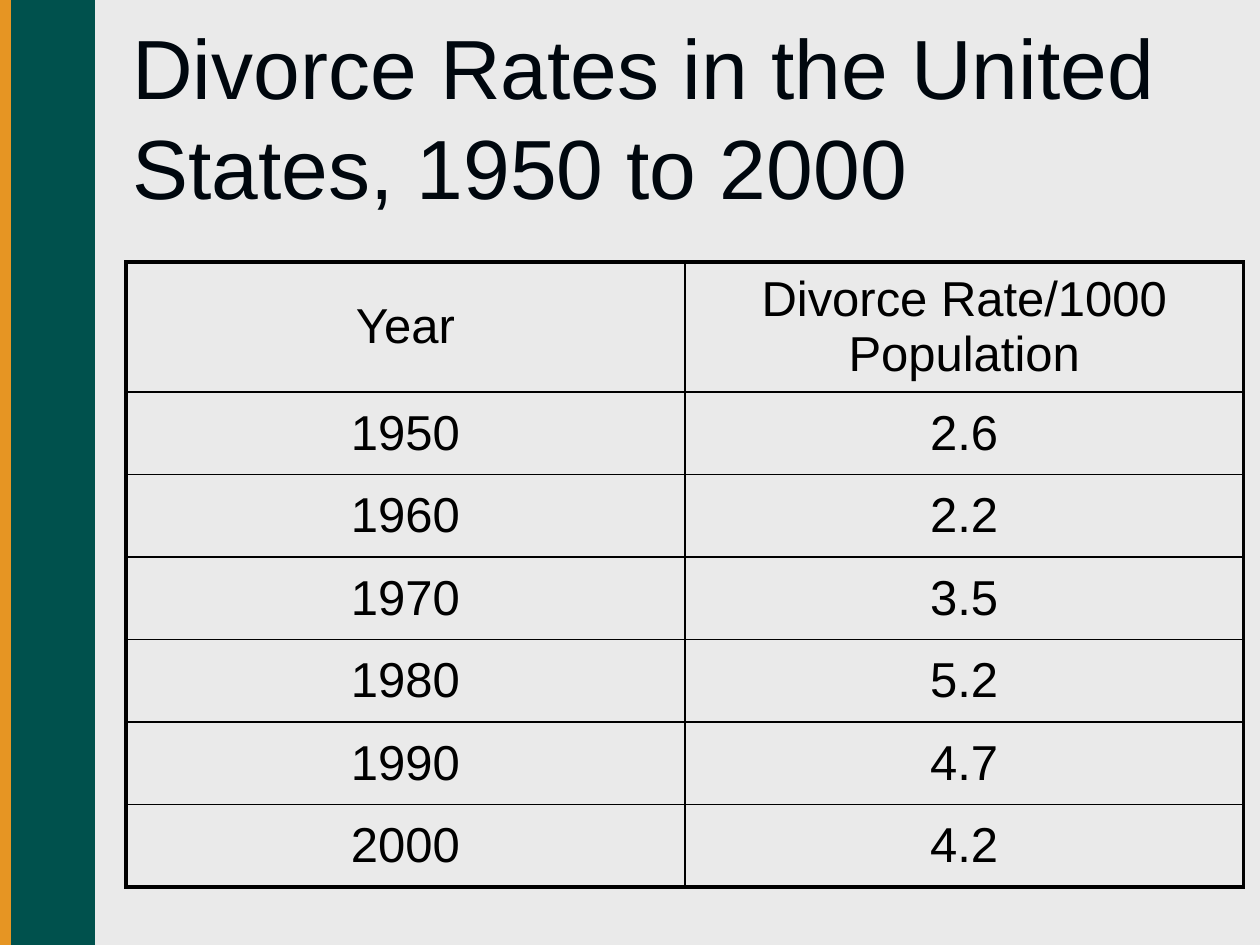
from typing import NamedTuple

from lxml import etree
from pptx import Presentation
from pptx import util as u
from pptx.dml.color import RGBColor
from pptx.enum import shapes, text
from pptx.oxml.ns import qn

FONT = "Arial"
BLACK = "000000"
THIN, THICK = 1, 2.25


class Bar(NamedTuple):
    width: float
    color: str


class Rate(NamedTuple):
    year: str
    divorces: str


BARS = [Bar(0.75, "00514D"), Bar(0.08, "E69523")]
ROWS = [
    Rate("Year", "Divorce Rate/1000 Population"),
    Rate("1950", "2.6"),
    Rate("1960", "2.2"),
    Rate("1970", "3.5"),
    Rate("1980", "5.2"),
    Rate("1990", "4.7"),
    Rate("2000", "4.2"),
]
TABLE_WIDTH, TABLE_HEIGHT, HEADER_HEIGHT = 8.87, 4.96, 1.03


def rgb(color: str) -> RGBColor:
    return RGBColor.from_string(color)


def add_bar(slide, bar: Bar, height: int) -> None:
    shape = slide.shapes.add_shape(
        shapes.MSO_SHAPE.RECTANGLE, 0, 0, u.Inches(bar.width), height)
    shape.shadow.inherit = False
    shape.fill.solid()
    shape.fill.fore_color.rgb = rgb(bar.color)
    shape.line.color.rgb = rgb(bar.color)
    shape.line.width = u.Pt(0.75)


def write(paragraph, words: str, size: float, color: str, alignment) -> None:
    paragraph.alignment = alignment
    run = paragraph.add_run()
    run.text = words
    run.font.name = FONT
    run.font.size = u.Pt(size)
    run.font.color.rgb = rgb(color)


def set_borders(cell, widths: dict[str, float]) -> None:
    """Draw black cell borders; widths are in points, keyed L, R, T, B in that order."""
    properties = cell._tc.get_or_add_tcPr()
    for index, (side, width) in enumerate(widths.items()):
        line = etree.Element(qn(f"a:ln{side}"), w=str(u.Pt(width)))
        fill = etree.SubElement(line, qn("a:solidFill"))
        etree.SubElement(fill, qn("a:srgbClr"), val=BLACK)
        properties.insert(index, line)


def add_title(slide) -> None:
    title = slide.shapes.title
    title.left, title.top = u.Inches(0.95), u.Inches(0.58)
    title.width, title.height = u.Inches(8.93), u.Inches(1.19)
    frame = title.text_frame
    frame.auto_size = text.MSO_AUTO_SIZE.NONE
    frame.word_wrap = True
    frame.vertical_anchor = text.MSO_ANCHOR.BOTTOM
    write(frame.paragraphs[0], "Divorce Rates in the United States, 1950 to 2000",
          48, "00070E", text.PP_ALIGN.LEFT)


def add_rate_table(slide) -> None:
    last_row, last_column = len(ROWS) - 1, len(Rate._fields) - 1
    table = slide.shapes.add_table(
        len(ROWS), len(Rate._fields), u.Inches(1), u.Inches(2.08),
        u.Inches(TABLE_WIDTH), u.Inches(TABLE_HEIGHT)).table
    table.first_row = table.horz_banding = False
    for column in table.columns:
        column.width = u.Inches(TABLE_WIDTH / len(Rate._fields))
    for i, rate in enumerate(ROWS):
        body_height = (TABLE_HEIGHT - HEADER_HEIGHT) / last_row
        table.rows[i].height = u.Inches(body_height if i else HEADER_HEIGHT)
        for j, words in enumerate(rate):
            cell = table.cell(i, j)
            cell.fill.background()
            cell.vertical_anchor = text.MSO_ANCHOR.MIDDLE
            write(cell.text_frame.paragraphs[0], words, 28, BLACK,
                  text.PP_ALIGN.CENTER)
            set_borders(cell, {
                "L": THICK if j == 0 else THIN,
                "R": THICK if j == last_column else THIN,
                "T": THICK if i == 0 else THIN,
                "B": THICK if i == last_row else THIN,
            })


def main() -> None:
    presentation = Presentation()
    presentation.slide_width = u.Inches(10)
    presentation.slide_height = u.Inches(7.5)
    slide = presentation.slides.add_slide(presentation.slide_layouts[5])
    slide.background.fill.solid()
    slide.background.fill.fore_color.rgb = rgb("EAEAEA")
    for bar in BARS:
        add_bar(slide, bar, presentation.slide_height)
    add_title(slide)
    add_rate_table(slide)
    presentation.save("out.pptx")


if __name__ == "__main__":
    main()
